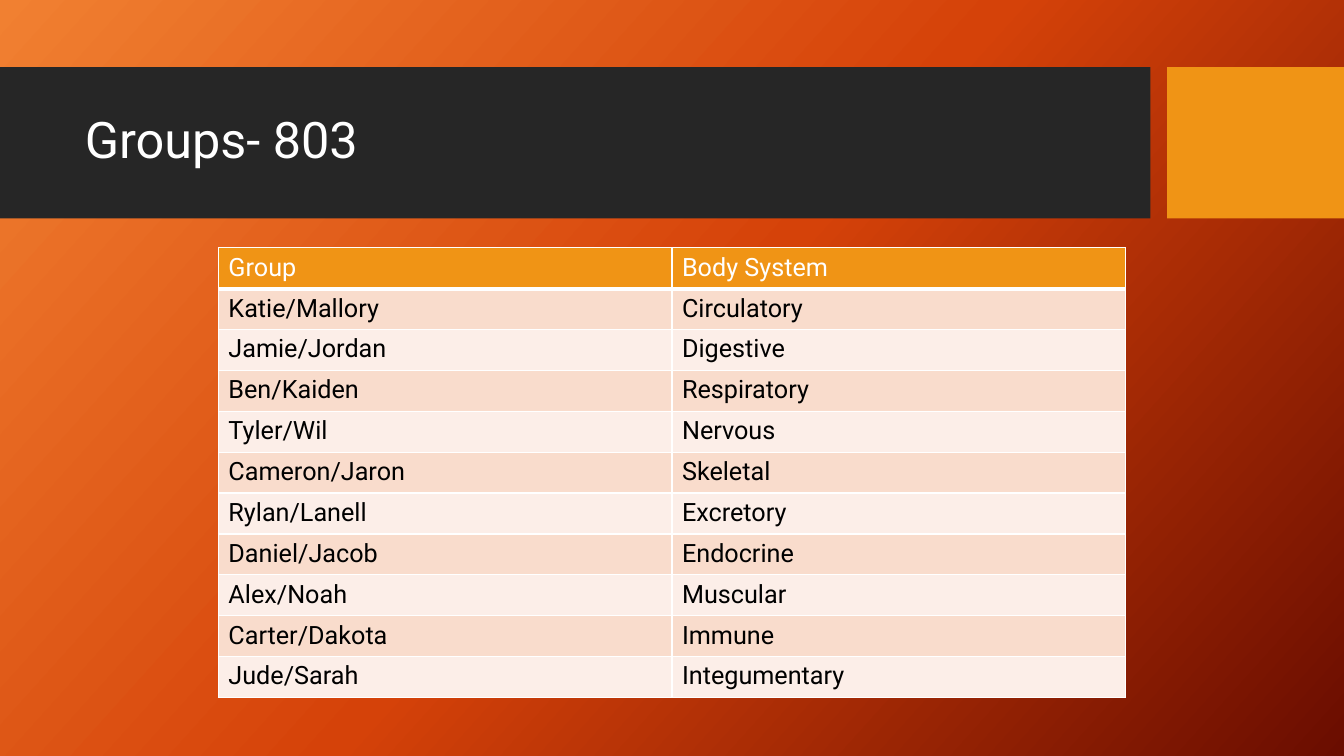
import dataclasses

import lxml.etree
import pptx
import pptx.dml.color
import pptx.enum.shapes
import pptx.enum.text
import pptx.oxml.ns
import pptx.util

Pt = pptx.util.Pt
qn = pptx.oxml.ns.qn


@dataclasses.dataclass(frozen=True)
class Theme:
    font: str = "Roboto"
    title_size: int = 36
    table_size: int = 18
    white: str = "FFFFFF"
    black: str = "000000"
    banner: str = "262626"
    accent: str = "F09415"
    bands: tuple = ("F9DCCC", "FCEEE8")
    background: tuple = ("F18031", "D54209", "6A0D00")


theme = Theme()
rgb = pptx.dml.color.RGBColor.from_string


def write_text(frame, text, size, color, line_spacing=None):
    paragraph = frame.paragraphs[0]
    paragraph.line_spacing = line_spacing
    run = paragraph.add_run()
    run.text = text
    run.font.name = theme.font
    run.font.size = Pt(size)
    run.font.bold = False
    run.font.color.rgb = rgb(color)


def add_borders(cell, bottom_width):
    properties = cell._tc.get_or_add_tcPr()
    for side, width in (("L", 1), ("R", 1), ("T", 1), ("B", bottom_width)):
        line = lxml.etree.SubElement(properties, qn(f"a:ln{side}"), w=str(Pt(width)))
        fill = lxml.etree.SubElement(line, qn("a:solidFill"))
        lxml.etree.SubElement(fill, qn("a:srgbClr"), val=theme.white)


presentation = pptx.Presentation()
presentation.slide_width = Pt(960)
presentation.slide_height = Pt(540)
slide = presentation.slides.add_slide(presentation.slide_layouts[6])

# Background gradient: python-pptx gives two stops, the third is added in XML
background = slide.background.fill
background.gradient()
background.gradient_angle = 318
start, end = background.gradient_stops
start.color.rgb = rgb(theme.background[0])
end.color.rgb = rgb(theme.background[2])
stop_list = slide.background._cSld.find(".//" + qn("a:gsLst"))
middle = lxml.etree.Element(qn("a:gs"), pos="50000")
lxml.etree.SubElement(middle, qn("a:srgbClr"), val=theme.background[1])
stop_list.insert(1, middle)

# Banner and accent block
for left, width, color in ((0, 821.7, theme.banner), (833.6, 126.4, theme.accent)):
    block = slide.shapes.add_shape(
        pptx.enum.shapes.MSO_SHAPE.RECTANGLE, Pt(left), Pt(48), Pt(width), Pt(108))
    block.shadow.inherit = False
    block.fill.solid()
    block.fill.fore_color.rgb = rgb(color)
    block.line.fill.background()

# Title
title = slide.shapes.add_textbox(Pt(53.5), Pt(59), Pt(756.5), Pt(85)).text_frame
title.word_wrap = True
title.vertical_anchor = pptx.enum.text.MSO_ANCHOR.MIDDLE
write_text(title, "Groups- 803", size=theme.title_size, color=theme.white, line_spacing=0.9)

# Table of groups
rows = (
    ("Group", "Body System"),
    ("Katie/Mallory", "Circulatory"),
    ("Jamie/Jordan", "Digestive"),
    ("Ben/Kaiden", "Respiratory"),
    ("Tyler/Wil", "Nervous"),
    ("Cameron/Jaron", "Skeletal"),
    ("Rylan/Lanell", "Excretory"),
    ("Daniel/Jacob", "Endocrine"),
    ("Alex/Noah", "Muscular"),
    ("Carter/Dakota", "Immune"),
    ("Jude/Sarah", "Integumentary"),
)
row_height = 29.2
table = slide.shapes.add_table(
    len(rows), 2, Pt(156), Pt(177), Pt(648), Pt(row_height * len(rows))).table
for row_index, texts in enumerate(rows):
    table.rows[row_index].height = Pt(row_height)
    is_header = row_index == 0
    fill_color = theme.accent if is_header else theme.bands[(row_index - 1) % 2]
    text_color = theme.white if is_header else theme.black
    for column_index, text in enumerate(texts):
        cell = table.cell(row_index, column_index)
        add_borders(cell, bottom_width=3 if is_header else 1)
        cell.fill.solid()
        cell.fill.fore_color.rgb = rgb(fill_color)
        write_text(cell.text_frame, text, size=theme.table_size, color=text_color)

presentation.save("out.pptx")
